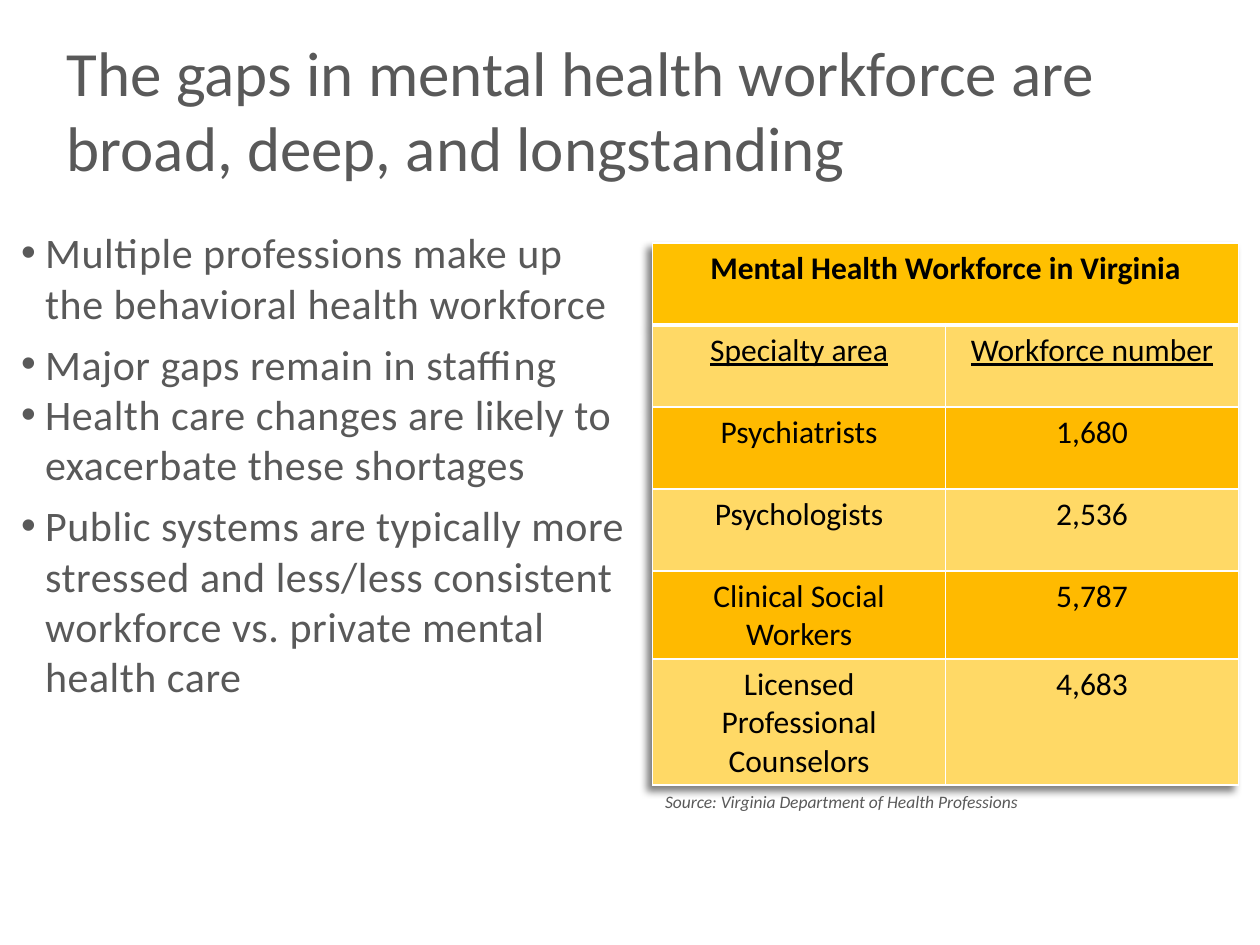
from lxml.etree import SubElement
from pptx import Presentation
from pptx.dml.color import RGBColor
from pptx.enum.text import MSO_ANCHOR, MSO_AUTO_SIZE, PP_ALIGN
from pptx.oxml import parse_xml
from pptx.oxml.ns import qn
from pptx.util import Inches, Pt

GRAY = RGBColor(0x59, 0x59, 0x59)
BLACK = RGBColor(0, 0, 0)
GOLD = RGBColor(0xFF, 0xC0, 0x00)
AMBER = RGBColor(0xFF, 0xBA, 0x00)
PALE = RGBColor(0xFF, 0xD9, 0x66)

TITLE = "The gaps in mental health workforce are broad, deep, and longstanding"
POINTS = [  # text, space after in points
    ("Multiple professions make up the behavioral health workforce", 6),
    ("Major gaps remain in staffing", 0),
    ("Health care changes are likely to exacerbate these shortages", 6),
    ("Public systems are typically more stressed and less/less consistent "
     "workforce vs. private mental health care", 6),
]
ROWS = [
    ("Mental Health Workforce in Virginia", ""),
    ("Specialty area", "Workforce number"),
    ("Psychiatrists", "1,680"),
    ("Psychologists", "2,536"),
    ("Clinical Social Workers", "5,787"),
    ("Licensed Professional Counselors", "4,683"),
]
SOURCE = "Source: Virginia Department of Health Professions"

HEAD = dict(size=Pt(36))
BODY = dict(size=Pt(24))
NOTE = dict(size=Pt(10), italic=True)
CELL = dict(size=Pt(18), bold=False)
ROW_FORMATS = {0: dict(bold=True), 1: dict(underline=True)}

XMLNS = 'xmlns:a="http://schemas.openxmlformats.org/drawingml/2006/main"'
SHADOW = (f'<a:effectLst {XMLNS}><a:outerShdw blurRad="50800" dist="50800" '
          'dir="8100000" algn="tr" rotWithShape="0"><a:srgbClr val="000000">'
          '<a:alpha val="50000"/></a:srgbClr></a:outerShdw></a:effectLst>')


def style(para, form, color=GRAY):
    for run in para.runs:
        run.font.name = "Calibri"
        run.font.color.rgb = color
        for key, value in form.items():
            setattr(run.font, key, value)


def place(shape, *box):
    for key, value in zip(("left", "top", "width", "height"), box):
        setattr(shape, key, Inches(value))


def add_text(slide, *box):
    frame = slide.shapes.add_textbox(*map(Inches, box)).text_frame
    frame.word_wrap = True
    return frame


def add_bullet(para):
    props = para._p.get_or_add_pPr()
    props.set("marL", str(Inches(0.19)))
    props.set("indent", str(-Inches(0.19)))
    SubElement(props, qn("a:buFont")).set("typeface", "Arial")
    SubElement(props, qn("a:buChar")).set("char", "•")


def set_borders(cell, bottom):
    props = cell._tc.get_or_add_tcPr()
    for side, width in (("L", 1), ("R", 1), ("T", 1), ("B", bottom)):
        line = SubElement(props, qn(f"a:ln{side}"), w=str(Pt(width)))
        fill = SubElement(line, qn("a:solidFill"))
        SubElement(fill, qn("a:srgbClr"), val="FFFFFF")


def add_table(slide):
    count = len(ROWS)
    frame = slide.shapes.add_table(count, 2, *map(
        Inches, (5.18, 1.93, 4.65, 0.65 * count)))
    table = frame.table
    table._tbl.tblPr.insert(0, parse_xml(SHADOW))
    for r, row in enumerate(ROWS):
        for c, text in enumerate(row):
            cell = table.cell(r, c)
            set_borders(cell, 1 if r else 3)
            cell.fill.solid()
            cell.fill.fore_color.rgb = (PALE if r % 2 else AMBER) if r else GOLD
            cell.text = text
            para = cell.text_frame.paragraphs[0]
            para.alignment = PP_ALIGN.CENTER
            style(para, CELL | ROW_FORMATS.get(r, {}), BLACK)
    table.cell(0, 0).merge(table.cell(0, 1))


def main():
    deck = Presentation()
    deck.slide_width, deck.slide_height = Inches(10), Inches(7.5)
    slide = deck.slides.add_slide(deck.slide_layouts[5])

    title = slide.shapes.title
    place(title, 0.43, 0.38, 9, 0.97)
    frame = title.text_frame
    frame.text = TITLE
    frame.auto_size = MSO_AUTO_SIZE.NONE
    frame.vertical_anchor = MSO_ANCHOR.MIDDLE
    frame.paragraphs[0].alignment = PP_ALIGN.LEFT
    style(frame.paragraphs[0], HEAD)

    frame = add_text(slide, 0.07, 1.75, 5, 4.95)
    for i, (text, after) in enumerate(POINTS):
        para = frame.add_paragraph() if i else frame.paragraphs[0]
        para.text = text
        add_bullet(para)
        para.space_after = Pt(after)
        style(para, BODY)
        para.runs[0].font._element.set("spc", "30")

    add_table(slide)
    para = add_text(slide, 5.18, 6.23, 3.5, 0.27).paragraphs[0]
    para.text = SOURCE
    style(para, NOTE)
    deck.save("out.pptx")


if __name__ == "__main__":
    main()
